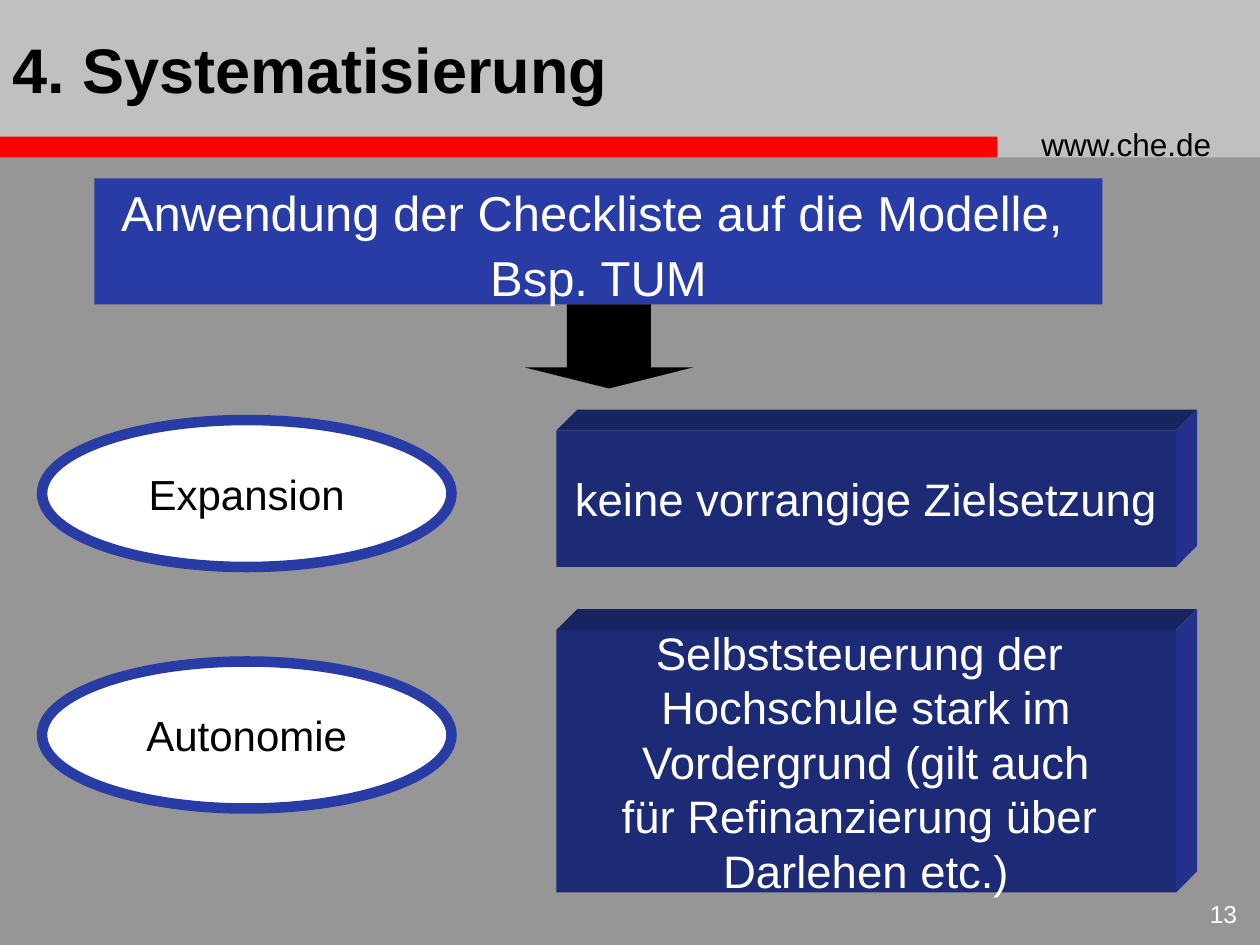
from pptx import Presentation
from pptx.dml.color import RGBColor
from pptx.enum.shapes import MSO_SHAPE as Kind
from pptx.enum.text import MSO_ANCHOR as Anchor, PP_ALIGN as Align
from pptx.util import Pt

HUES = {
    "back": "969696", "head": "C0C0C0", "rule": "FF0000", "blue": "293BA5",
    "front": "1D2A76", "top": "182460", "side": "24318C",
    "black": "000000", "white": "FFFFFF",
}
DEPTH = 12


def hue(name):
    """Return the named colour."""
    return RGBColor.from_string(HUES[name])


def paint(shape, fill, line=None, width=6):
    """Set fill and outline, and drop the shadow."""
    shape.shadow.inherit = False
    shape.fill.solid()
    shape.fill.fore_color.rgb = hue(fill)
    if line:
        shape.line.color.rgb = hue(line)
        shape.line.width = Pt(width)
    else:
        shape.line.fill.background()
    return shape


def add_form(slide, kind, box, fill, line=None):
    """Add a preset shape in the box."""
    shape = slide.shapes.add_shape(kind, *map(Pt, box))
    return paint(shape, fill, line)


def write(shape, lines, size, color, align=Align.CENTER,
          anchor=Anchor.MIDDLE, wrap=False, bold=False, space=None):
    """Write one paragraph for each line."""
    frame = shape.text_frame
    frame.word_wrap = wrap
    frame.vertical_anchor = anchor
    frame.text = "\n".join(lines)
    for para in frame.paragraphs:
        para.alignment = align
        if space:
            para.line_spacing = space
        font = para.font
        font.name, font.size, font.bold = "Arial", Pt(size), bold
        font.color.rgb = hue(color)


def add_label(slide, box, text, size, color, **style):
    """Add a wrapped text box with one line."""
    label = slide.shapes.add_textbox(*map(Pt, box))
    write(label, [text], size, color, wrap=True, **style)


def add_face(slide, points, fill):
    """Add a flat polygon."""
    start, *rest = points
    pen = slide.shapes.build_freeform(*start, scale=Pt(1))
    pen.add_line_segments(rest)
    paint(pen.convert_to_shape(), fill)


def add_block(slide, box, lines):
    """Add a solid block with its text on the front."""
    left, top, width, height = box
    right, base = left + width, top + height
    far, high = right + DEPTH, top - DEPTH
    add_face(slide, [(left, top), (left + DEPTH, high),
                     (far, high), (right, top)], "top")
    add_face(slide, [(right, top), (far, high),
                     (far, base - DEPTH), (right, base)], "side")
    front = add_form(slide, Kind.RECTANGLE, box, "front")
    write(front, lines, 26, "white")


def add_oval(slide, box, text):
    """Add a ringed ellipse with a term."""
    oval = add_form(slide, Kind.OVAL, box, "white", "blue")
    write(oval, [text], 24, "black")


def add_head(slide, box):
    """Add the title band with its red rule and web address."""
    left, top, width, height = box
    add_form(slide, Kind.RECTANGLE, box, "head")
    add_form(slide, Kind.RECTANGLE,
             (left, top + height - 12, 570, 12), "rule")
    add_label(slide, (left + 588, top + 68, 126, 29), "www.che.de", 18,
              "black", align=Align.LEFT, anchor=Anchor.TOP)
    add_label(slide, (left, top, 582, 78), "4. Systematisierung", 36,
              "black", align=Align.LEFT, bold=True)


def add_lead(slide, box):
    """Add the lead banner and the arrow below it."""
    left, top, width, height = box
    banner = add_form(slide, Kind.RECTANGLE, box, "blue")
    write(banner, ["Anwendung der Checkliste auf die Modelle, ", "Bsp. TUM"],
          28, "white", space=1.1)
    arrow = add_form(slide, Kind.DOWN_ARROW,
                     (left + 246, top + height, 96, 48), "black")
    arrow.adjustments[0], arrow.adjustments[1] = 0.5, 0.25


def add_pairs(slide, box):
    """Add the terms on the left and their findings on the right."""
    left, top, width, height = box
    auto = ["Selbststeuerung der ", "Hochschule stark im",
            "Vordergrund (gilt auch", "für Refinanzierung über ",
            "Darlehen etc.)"]
    rows = [("Expansion", 0, ["keine vorrangige Zielsetzung"], 6, 78),
            ("Autonomie", 138, auto, 120, height - 120)]
    for term, drop, lines, shift, tall in rows:
        add_block(slide, (left + 294, top + shift, width - 294, tall), lines)
        add_oval(slide, (left, top + drop, 234, 84), term)


def main():
    """Build the slide and save it."""
    deck = Presentation()
    deck.slide_width, deck.slide_height = Pt(720), Pt(540)
    slide = deck.slides.add_slide(deck.slide_layouts[6])
    slide.background.fill.solid()
    slide.background.fill.fore_color.rgb = hue("back")
    add_head(slide, (0, 0, 720, 90))
    add_lead(slide, (54, 102, 576, 72))
    add_pairs(slide, (24, 240, 648, 270))
    add_label(slide, (672, 510, 42, 30), "13", 14, "white",
              align=Align.RIGHT, anchor=Anchor.TOP)
    deck.save("out.pptx")


if __name__ == "__main__":
    main()
